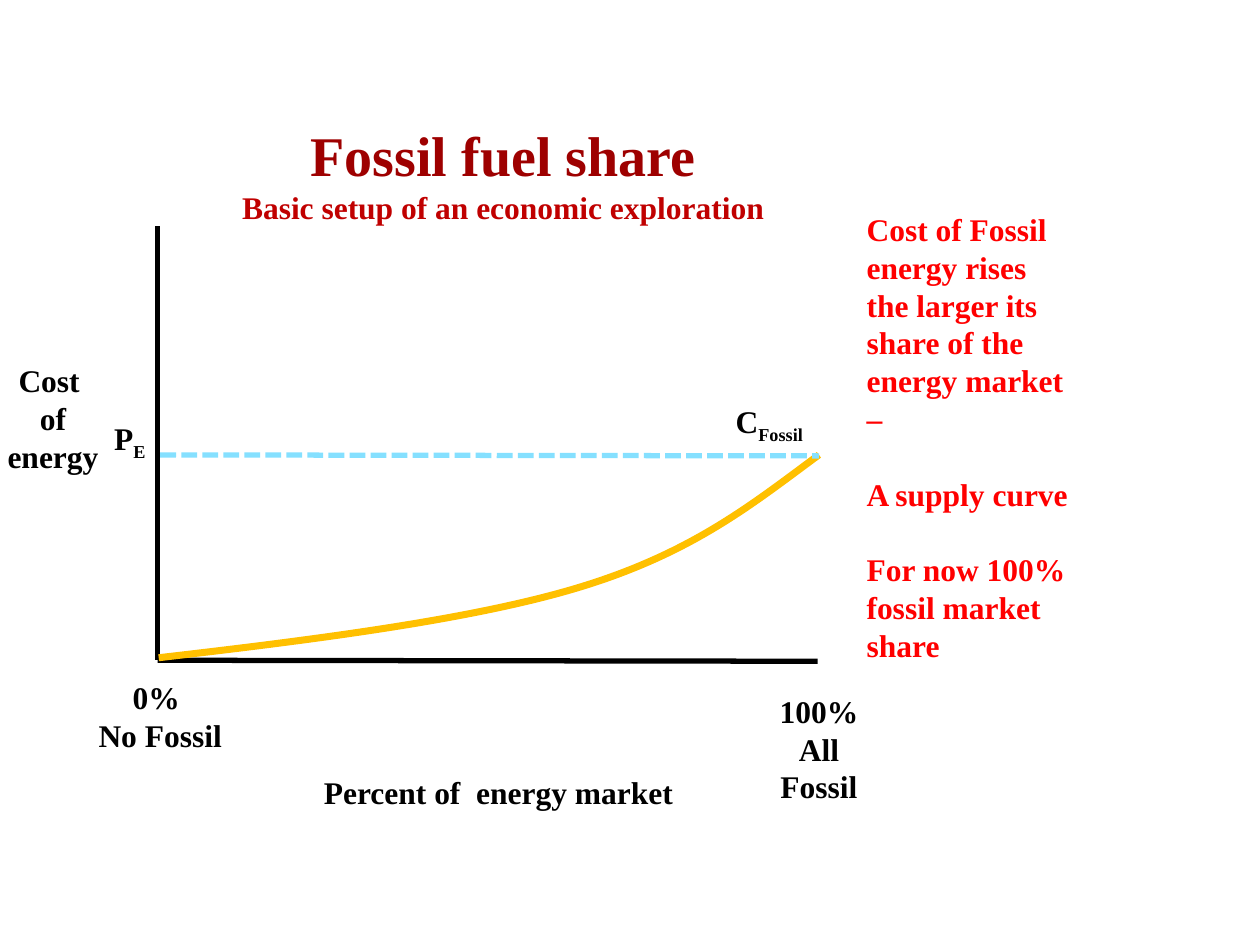
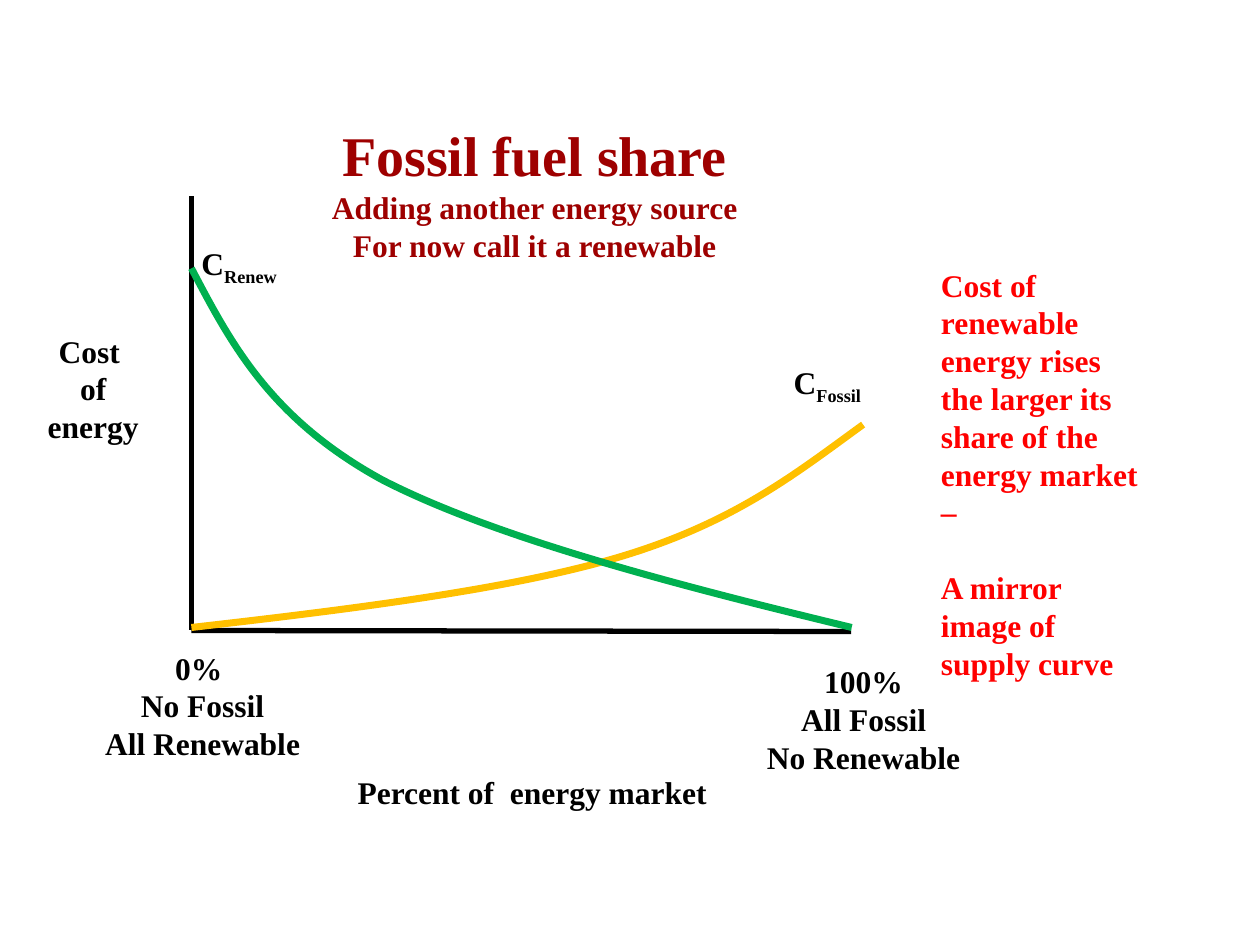
from dataclasses import dataclass

from lxml import etree
from pptx import Presentation
from pptx.dml.color import RGBColor
from pptx.enum.dml import MSO_LINE
from pptx.enum.shapes import MSO_CONNECTOR
from pptx.enum.text import PP_ALIGN
from pptx.oxml.ns import qn
from pptx.util import Cm, Pt

LEFT, CENTER = PP_ALIGN.LEFT, PP_ALIGN.CENTER
STRAIGHT = MSO_CONNECTOR.STRAIGHT
SHORT_DASH = MSO_LINE.SQUARE_DOT


@dataclass(frozen=True)
class Theme:
    font: str = "Times New Roman"
    title: str = "9E0000"
    subtitle: str = "C00000"
    ink: str = "000000"
    note: str = "FF0000"
    fossil: str = "FFC000"
    renewable: str = "00B050"
    price: str = "85E0FF"
    title_size: float = 32
    body_size: float = 18
    blank_line: float = 21.6
    axis_width: float = 3
    curve_width: float = 4


# Bezier points as fractions of a curve's width and height, measured from
# its lower left corner: one start point, then three points per segment
FOSSIL_CURVE = [(1, 1), (0.9, 0.76), (0.81, 0.52), (0.64, 0.35),
                (0.48, 0.19), (0.24, 0.09), (0, 0)]
RENEWABLE_CURVE = [(0, 1), (0.06, 0.79), (0.12, 0.58), (0.29, 0.41),
                   (0.46, 0.25), (0.73, 0.12), (1, 0)]


class CostDeck:
    """Holds the style and the current slide; all lengths are in cm."""

    def __init__(self, theme):
        self.theme = theme
        self.presentation = Presentation()
        self.presentation.slide_width = Cm(25.4)
        self.presentation.slide_height = Cm(19.05)
        self.slide = None

    def new_slide(self):
        layout = self.presentation.slide_layouts[6]
        self.slide = self.presentation.slides.add_slide(layout)

    def style_run(self, run, color, size):
        run.font.name = self.theme.font
        run.font.size = Pt(size)
        run.font.bold = True
        run.font.color.rgb = RGBColor.from_string(color)

    def text(self, left, top, width, lines, color=None, align=CENTER, height=0.97):
        box = self.slide.shapes.add_textbox(Cm(left), Cm(top), Cm(width), Cm(height))
        text_frame = box.text_frame
        text_frame.word_wrap = True
        text_frame.text = "\n".join(lines)
        for paragraph in text_frame.paragraphs:
            paragraph.alignment = align
            for run in paragraph.runs:
                self.style_run(run, color or self.theme.ink, self.theme.body_size)
        return text_frame

    def title(self, left, width, height, subtitles, color):
        text_frame = self.text(left, 2.31, width, ["Fossil fuel share", *subtitles],
                               color, height=height)
        heading = text_frame.paragraphs[0].runs[0]
        self.style_run(heading, self.theme.title, self.theme.title_size)

    def note(self, left, top, height, lines):
        text_frame = self.text(left, top, 4.65, lines, self.theme.note, LEFT, height)
        for paragraph in text_frame.paragraphs[1:]:
            paragraph.space_before = Pt(self.theme.blank_line)

    def symbol(self, left, top, width, letter, subscript, align=LEFT):
        paragraph = self.text(left, top, width, [letter], align=align).paragraphs[0]
        run = paragraph.add_run()
        run.text = subscript
        self.style_run(run, self.theme.ink, self.theme.body_size)
        run._r.get_or_add_rPr().set("baseline", "-25000")

    def line(self, start, end, color, dash=None):
        connector = self.slide.shapes.add_connector(
            STRAIGHT, *(Cm(value) for value in (*start, *end)))
        connector.line.color.rgb = RGBColor.from_string(color)
        connector.line.width = Pt(self.theme.axis_width)
        if dash is not None:
            connector.line.dash_style = dash
        etree.SubElement(connector._element.spPr, qn("a:effectLst"))

    def curve(self, left, bottom, width, height, fractions, color):
        points = [(Cm(left + x * width), Cm(bottom - y * height)) for x, y in fractions]
        builder = self.slide.shapes.build_freeform(*points[0])
        builder.add_line_segments(points[1:], close=False)
        shape = builder.convert_to_shape()
        shape.shadow.inherit = False
        shape.fill.background()
        shape.line.color.rgb = RGBColor.from_string(color)
        shape.line.width = Pt(self.theme.curve_width)
        # Turn every three straight segments into one Bezier segment
        outline = next(shape._element.iter(qn("a:path")))
        segments = outline.findall(qn("a:lnTo"))
        for first in range(0, len(segments), 3):
            bezier = etree.SubElement(outline, qn("a:cubicBezTo"))
            for segment in segments[first:first + 3]:
                bezier.append(segment[0])
                outline.remove(segment)

    def axes(self, left, bottom, cost_left):
        self.line((left, bottom - 8.75), (left, bottom), self.theme.ink)
        self.line((left, bottom), (left + 13.3, bottom + 0.02), self.theme.ink)
        self.text(cost_left, bottom - 6.15, 2.7, ["Cost ", "of energy"])
        self.text(left + 3.1, 15.45, 9.25, ["Percent of  energy market"], align=LEFT)


def fossil_only(deck):
    theme = deck.theme
    deck.new_slide()
    deck.title(4.57, 11.15, 2.39, ["Basic setup of an economic exploration"],
               theme.subtitle)
    # Axes and their end labels
    deck.axes(3.18, 13.31, -0.28)
    deck.text(1.73, 13.54, 3, ["0% ", "No Fossil"])
    deck.text(15.01, 13.82, 3, ["100%", "All Fossil"])
    # Supply curve and energy price
    deck.curve(3.2, 13.26, 13.31, 4.09, FOSSIL_CURVE, theme.fossil)
    deck.line((3.23, 9.17), (16.51, 9.19), theme.price, SHORT_DASH)
    deck.symbol(14.58, 7.98, 1.9, "C", "Fossil")
    deck.symbol(1.12, 8.33, 3, "P", "E", CENTER)
    deck.note(17.22, 4.11, 9.5, [
        "Cost of Fossil energy rises the larger its share of the energy market –",
        "A supply curve",
        "For now 100% fossil market share"])


def fossil_and_renewable(deck):
    theme = deck.theme
    deck.new_slide()
    deck.title(6.4, 8.76, 3.18,
               ["Adding another energy source", "For now call it a renewable"],
               theme.title)
    # Axes and their end labels
    deck.axes(3.86, 12.71, 0.53)
    deck.text(1.75, 12.95, 4.67, ["0% ", "No Fossil", "All Renewable"])
    deck.text(14.83, 13.23, 5.16, ["100%", "All Fossil", "No Renewable"])
    # Both cost curves
    deck.curve(3.86, 12.65, 13.54, 4.09, FOSSIL_CURVE, theme.fossil)
    deck.curve(3.86, 12.65, 13.31, 7.24, RENEWABLE_CURVE, theme.renewable)
    deck.symbol(15.75, 7.19, 1.9, "C", "Fossil")
    deck.symbol(3.81, 4.8, 2.13, "C", "Renew")
    deck.note(18.72, 5.23, 8.71, [
        "Cost of renewable energy rises the larger its share of the energy market –",
        "A mirror image of supply curve"])


def main():
    deck = CostDeck(Theme())
    fossil_only(deck)
    fossil_and_renewable(deck)
    deck.presentation.save("out.pptx")


if __name__ == "__main__":
    main()
